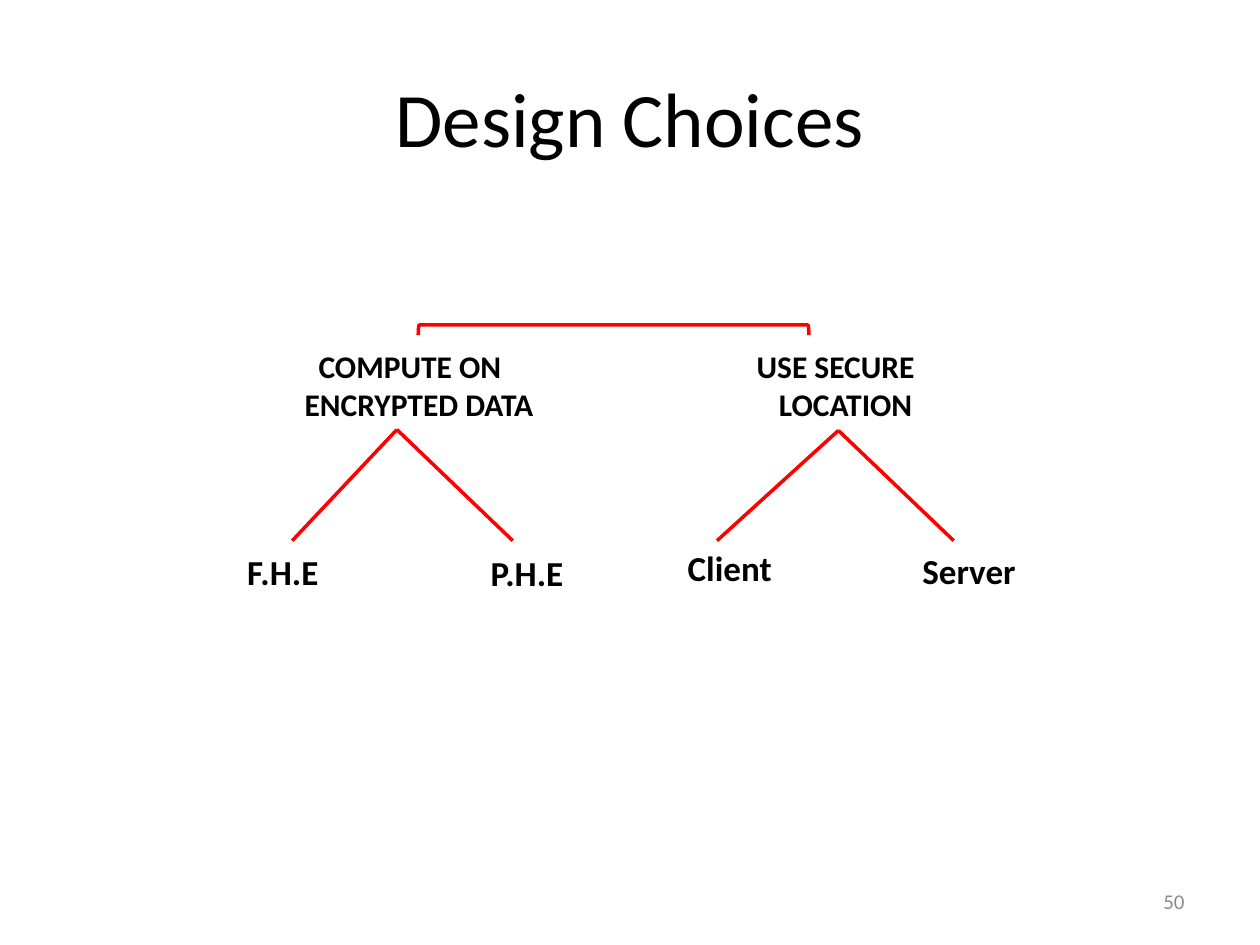
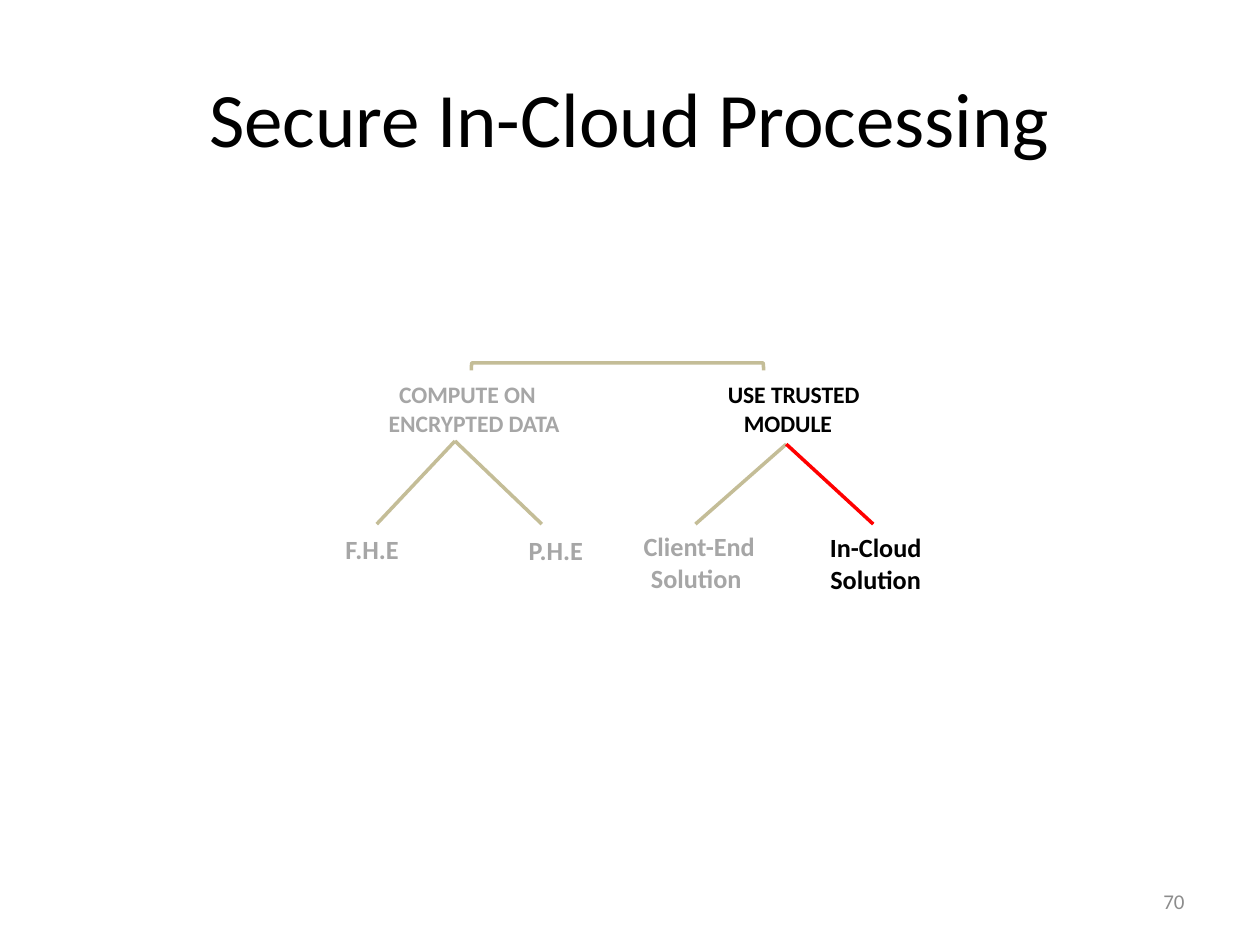
"""Build two slides that show the design choices for secure processing as a tree."""
from lxml.etree import SubElement
from pptx import Presentation
from pptx.dml.color import RGBColor
from pptx.enum.shapes import MSO_CONNECTOR, MSO_SHAPE
from pptx.enum.text import MSO_ANCHOR, PP_ALIGN
from pptx.oxml.ns import qn
from pptx.util import Pt

FONT = "Calibri"
COLOURS = {
    "black": "000000",
    "muted": "A6A6A6",
    "number": "8C8C8C",
    "red": "FF0000",
    "tan": "C4BD97",
}

# Labels: left, top, colour, alignment, lines of (indent, text).
# Branches: joined label or None, apex, then (end x, line colour) for each leaf.
LEFT, CENTER = PP_ALIGN.LEFT, PP_ALIGN.CENTER
TREES = [
    {
        "title": "Design Choices",
        "number": "50",
        "branch": {"size": 18, "width": 156.2, "height": 51},
        "leaf": {"size": 20, "width": 144, "height": 31.5},
        "branch_labels": [
            (167, 195, "black", LEFT, [(8, "COMPUTE ON"), (0, "ENCRYPTED DATA")]),
            (401, 195, "black", LEFT, [(24.3, "USE SECURE"), (37, "LOCATION")]),
        ],
        "leaf_labels": [
            (102.2, 311, "black", LEFT, [(32, "F.H.E")]),
            (233.3, 311.8, "black", LEFT, [(40, "P.H.E")]),
            (341.3, 309, "black", LEFT, [(44.6, "Client")]),
            (474.5, 310.3, "black", LEFT, [(45.5, "Server")]),
        ],
        "branches": [
            (None, 226.8, 245.5, [(167, "red"), (293, "red")]),
            (1, 478.8, 245.5, [(409.7, "red"), (545, "red")]),
        ],
        "leaf_y": 309,
        "bracket": (350.6, 188.6, 5.8, 223.2, "red"),
    },
    {
        "title": "Secure In-Cloud Processing",
        "number": "70",
        "branch": {"size": 13.5, "width": 116.6, "height": 40},
        "leaf": {"size": 15, "width": 108, "height": 44},
        "branch_labels": [
            (215, 213.8, "muted", LEFT, [(6, "COMPUTE ON"), (0, "ENCRYPTED DATA")]),
            (391, 213.8, "black", LEFT, [(17.8, "USE TRUSTED"), (27, "MODULE")]),
        ],
        "leaf_labels": [
            (166.3, 301, "muted", LEFT, [(24, "F.H.E")]),
            (265, 301.7, "muted", LEFT, [(30, "P.H.E")]),
            (345.6, 299.5, "muted", CENTER, [(0, "Client-End"), (0, "Solution ")]),
            (446.4, 300.2, "black", CENTER, [(0, "In-Cloud"), (0, "Solution")]),
        ],
        "branches": [
            (None, 260, 252, [(215.3, "tan"), (309.6, "tan")]),
            (1, 449.3, 253.8, [(397.4, "tan"), (499, "red")]),
        ],
        "leaf_y": 299.5,
        "bracket": (352.8, 209.5, 4.3, 167, "tan"),
    },
]


def write(para, text, size, colour, bold=False):
    span = para.add_run()
    span.text = text
    span.font.name = FONT
    span.font.size = Pt(size)
    span.font.bold = bold
    span.font.color.rgb = RGBColor.from_string(COLOURS[colour])


def add_label(page, label, style):
    left, top, colour, alignment, lines = label
    box = page.shapes.add_textbox(
        Pt(left), Pt(top), Pt(style["width"]), Pt(style["height"]))
    box.text_frame.word_wrap = True
    for position, (indent, text) in enumerate(lines):
        para = box.text_frame.add_paragraph() if position else box.text_frame.paragraphs[0]
        para.alignment = alignment
        para._p.get_or_add_pPr().set("marL", str(Pt(indent)))
        write(para, text, style["size"], colour, True)
    return box


deck = Presentation()
deck.slide_width, deck.slide_height = Pt(720), Pt(540)

for tree in TREES:
    page = deck.slides.add_slide(deck.slide_layouts[5])

    title = page.shapes.title
    title.left, title.top, title.width, title.height = Pt(36), Pt(21.6), Pt(648), Pt(90)
    title.text_frame.vertical_anchor = MSO_ANCHOR.MIDDLE
    para = title.text_frame.paragraphs[0]
    para.alignment = PP_ALIGN.CENTER
    write(para, tree["title"], 44, "black")

    branch_boxes = [add_label(page, label, tree["branch"]) for label in tree["branch_labels"]]
    for label in tree["leaf_labels"]:
        add_label(page, label, tree["leaf"])

    for joined, apex_x, apex_y, leaves in tree["branches"]:
        for end_x, colour in leaves:
            line = page.shapes.add_connector(
                MSO_CONNECTOR.STRAIGHT, Pt(apex_x), Pt(apex_y), Pt(end_x), Pt(tree["leaf_y"]))
            if joined is not None:
                line.begin_connect(branch_boxes[joined], 2)
            line.line.color.rgb = RGBColor.from_string(COLOURS[colour])
            line.line.width = Pt(2)
            SubElement(line._element.spPr, qn("a:effectLst"))

    center_x, center_y, depth, span_length, colour = tree["bracket"]
    bracket = page.shapes.add_shape(
        MSO_SHAPE.LEFT_BRACKET, Pt(center_x - depth / 2), Pt(center_y - span_length / 2),
        Pt(depth), Pt(span_length))
    bracket.rotation = 90
    bracket.shadow.inherit = False
    bracket.fill.background()
    bracket.line.color.rgb = RGBColor.from_string(COLOURS[colour])
    bracket.line.width = Pt(2)

    number = page.shapes.add_textbox(Pt(516), Pt(500.5), Pt(168), Pt(28.75))
    number.text_frame.word_wrap = True
    number.text_frame.vertical_anchor = MSO_ANCHOR.MIDDLE
    para = number.text_frame.paragraphs[0]
    para.alignment = PP_ALIGN.RIGHT
    write(para, tree["number"], 12, "number")

deck.save("out.pptx")
